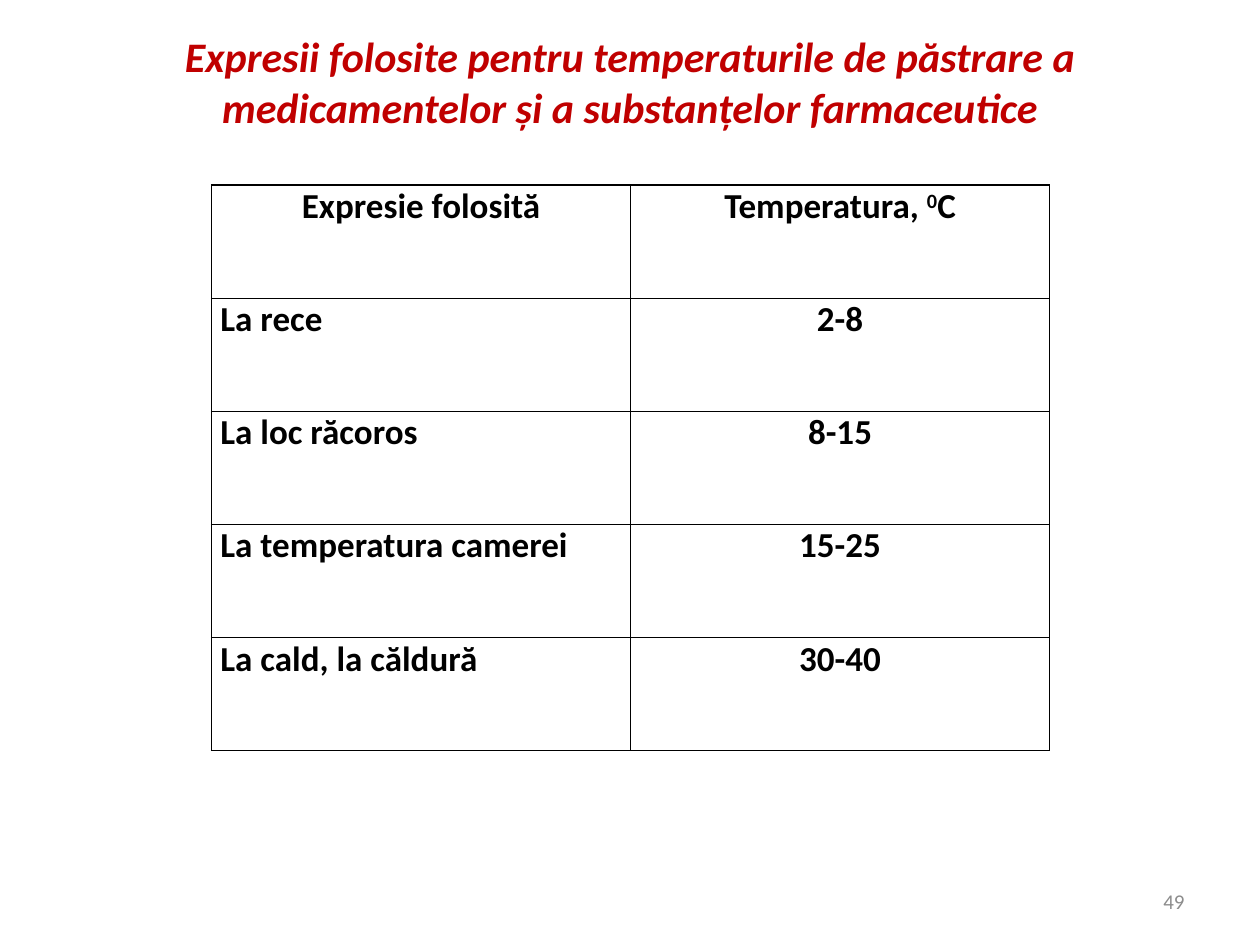
from pptx import Presentation
from pptx.dml.color import RGBColor
from pptx.enum.text import MSO_ANCHOR as Anchor, PP_ALIGN as Align
from pptx.oxml.ns import qn
from pptx.util import Inches, Pt
from lxml.etree import SubElement

RED = RGBColor(0xC0, 0x00, 0x00)
BLACK = RGBColor(0x00, 0x00, 0x00)
WHITE = RGBColor(0xFF, 0xFF, 0xFF)
GREY = RGBColor(0x8C, 0x8C, 0x8C)


def add_run(paragraph, text, size, color, bold=False, italic=False):
    run = paragraph.add_run()
    run.text = text
    run.font.name = "Calibri"
    run.font.size = Pt(size)
    run.font.color.rgb = color
    run.font.bold = bold
    run.font.italic = italic
    return run


def add_borders(cell):
    properties = cell._tc.get_or_add_tcPr()
    for side in ("a:lnL", "a:lnR", "a:lnT", "a:lnB"):
        line = SubElement(properties, qn(side), w=str(Pt(1)))
        fill = SubElement(line, qn("a:solidFill"))
        SubElement(fill, qn("a:srgbClr"), val=str(BLACK))


prs = Presentation()
prs.slide_width, prs.slide_height = Inches(10), Inches(7.5)
slide = prs.slides.add_slide(prs.slide_layouts[5])

title = slide.shapes.title
title.left, title.top = Inches(0.5), Inches(0.3)
title.width, title.height = Inches(9), Inches(0.69)
title.text_frame.vertical_anchor = Anchor.MIDDLE
heading = title.text_frame.paragraphs[0]
heading.alignment = Align.CENTER
add_run(heading, "Expresii folosite pentru temperaturile de păstrare a "
        "medicamentelor și a substanțelor farmaceutice", 24, RED, True, True)

rows = [
    (["Expresie folosită"], ["Temperatura, ", "0", "C"]),
    (["La rece"], ["2-8"]),
    (["La loc răcoros"], ["8-15"]),
    (["La temperatura camerei"], ["15-25"]),
    (["La cald, la căldură"], ["30-40"]),
]
temperatures = slide.shapes.add_table(
    len(rows), 2, Inches(1.68), Inches(1.47), Inches(6.65), Inches(4.49)).table
temperatures.first_row = False
temperatures.horz_banding = False

for r, row in enumerate(rows):
    for c, pieces in enumerate(row):
        cell = temperatures.cell(r, c)
        cell.margin_left = cell.margin_right = Inches(0.07)
        cell.margin_top = cell.margin_bottom = 0
        add_borders(cell)
        cell.fill.solid()
        cell.fill.fore_color.rgb = WHITE
        paragraph = cell.text_frame.paragraphs[0]
        paragraph.alignment = Align.CENTER if r == 0 or c == 1 else Align.LEFT
        for piece in pieces:
            run = add_run(paragraph, piece, 20, BLACK, True)
            if piece == "0":
                run.font._element.set("baseline", "30000")

page_number = slide.shapes.add_textbox(
    Inches(7.17), Inches(6.95), Inches(2.33), Inches(0.4)).text_frame
page_number.word_wrap = True
page_number.vertical_anchor = Anchor.MIDDLE
page_number.paragraphs[0].alignment = Align.RIGHT
add_run(page_number.paragraphs[0], "49", 12, GREY)

prs.save("out.pptx")
